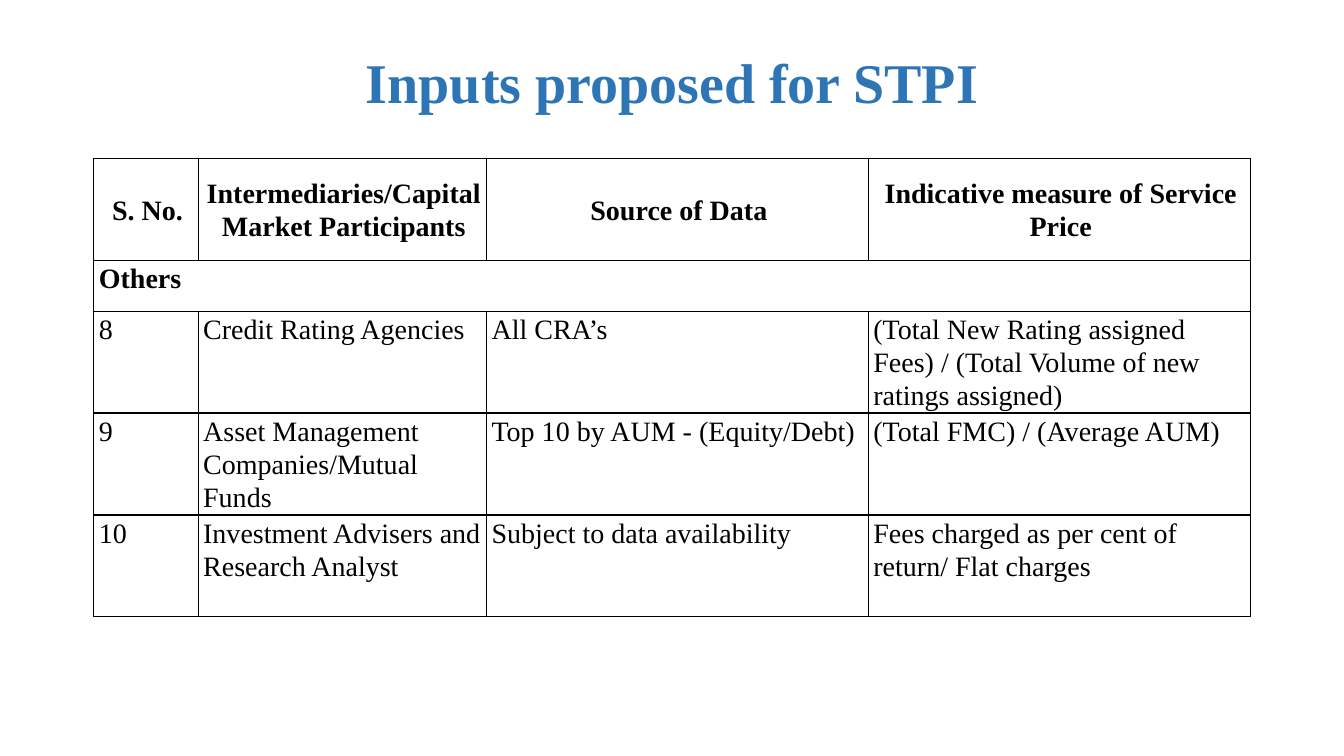
from lxml import etree
from pptx import Presentation
from pptx.dml.color import RGBColor
from pptx.enum import text
from pptx.oxml import ns
from pptx.util import Pt

FONT = "Times New Roman"
ROWS = [
    ["S. No.", "Intermediaries/Capital Market Participants", "Source of Data",
     "Indicative measure of Service Price"],
    ["Others", "", "", ""],
    ["8", "Credit Rating Agencies", "All CRA’s",
     "(Total New Rating assigned Fees) / (Total Volume of new ratings assigned)"],
    ["9", "Asset Management\nCompanies/Mutual Funds",
     "Top 10 by AUM - (Equity/Debt)", "(Total FMC) / (Average AUM)"],
    ["10", "Investment Advisers and Research Analyst",
     "Subject to data availability",
     "Fees charged as per cent of return/ Flat charges"],
]


def style(para, size, color, bold, space):
    para.font.name = FONT
    para.font.size = Pt(size)
    para.font.bold = bold
    para.font.color.rgb = RGBColor.from_string(color)
    para.line_spacing = space


def border(cell, side, shown):
    props = cell._tc.get_or_add_tcPr()
    line = etree.SubElement(props, ns.qn("a:ln" + side), w=str(Pt(1)))
    if shown:
        fill = etree.SubElement(line, ns.qn("a:solidFill"))
        etree.SubElement(fill, ns.qn("a:srgbClr"), val="000000")
    else:
        etree.SubElement(line, ns.qn("a:noFill"))


deck = Presentation()
deck.slide_width, deck.slide_height = Pt(960), Pt(540)
slide = deck.slides.add_slide(deck.slide_layouts[5])

title = slide.shapes.title
title.left, title.top, title.width, title.height = Pt(66), Pt(10), Pt(828), Pt(102)
title.text_frame.text = "Inputs proposed for STPI"
title.text_frame.vertical_anchor = text.MSO_ANCHOR.MIDDLE
head = title.text_frame.paragraphs[0]
head.alignment = text.PP_ALIGN.CENTER
style(head, 40, "2E75B6", True, 0.9)

table = slide.shapes.add_table(5, 4, Pt(67), Pt(113), Pt(826), Pt(328)).table
table.first_row = table.horz_banding = False
for col, width in zip(table.columns, [74.5, 206, 272.75, 272.75]):
    col.width = Pt(width)
for row, height in zip(table.rows, [72.8, 36.5, 72.8, 72.8, 72.8]):
    row.height = Pt(height)

for r, row in enumerate(ROWS):
    for c, words in enumerate(row):
        cell = table.cell(r, c)
        cell.text = words
        cell.margin_left, cell.margin_right = Pt(3.6), Pt(1.4)
        cell.margin_top, cell.margin_bottom = Pt(0.7), Pt(0)
        cell.vertical_anchor = text.MSO_ANCHOR.TOP if r else text.MSO_ANCHOR.MIDDLE
        for para in cell.text_frame.paragraphs:
            para.alignment = text.PP_ALIGN.LEFT if r else text.PP_ALIGN.CENTER
            style(para, 20, "000000", r < 2, 1.07)
        border(cell, "L", r != 1 or c == 0)
        border(cell, "R", r != 1 or c == 3)
        border(cell, "T", True)
        border(cell, "B", True)
        cell.fill.background()

table.cell(1, 0).merge(table.cell(1, 1))
deck.save("out.pptx")
